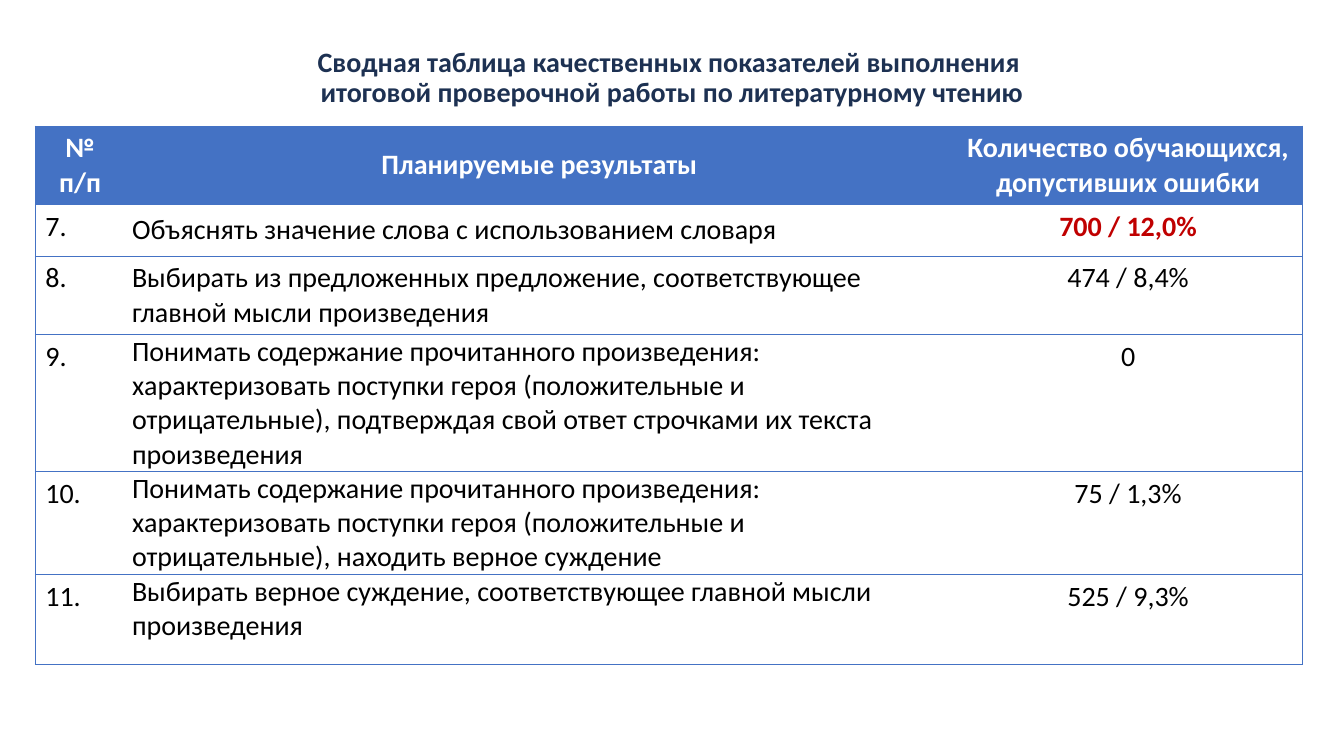
from lxml import etree
from pptx import Presentation
from pptx.dml.color import RGBColor
from pptx.enum.text import MSO_ANCHOR, PP_ALIGN
from pptx.oxml.ns import qn
from pptx.util import Inches, Pt

LEFT, CENTER = PP_ALIGN.LEFT, PP_ALIGN.CENTER
TOP, MIDDLE = MSO_ANCHOR.TOP, MSO_ANCHOR.MIDDLE

NAVY = RGBColor(0x1D, 0x31, 0x52)
BLUE = RGBColor(0x44, 0x72, 0xC4)
WHITE = RGBColor(0xFF, 0xFF, 0xFF)
BLACK = RGBColor(0x00, 0x00, 0x00)
RED = RGBColor(0xC0, 0x00, 0x00)

TITLE = ("Сводная таблица качественных показателей выполнения \v"
         "итоговой проверочной работы по литературному чтению")
HEADINGS = ("№ п/п", "Планируемые результаты",
            "Количество обучающихся, допустивших ошибки")
RESULTS = [
    ("7.", "Объяснять значение слова с использованием словаря", "700 / 12,0%"),
    ("8.", "Выбирать из предложенных предложение, соответствующее главной "
           "мысли произведения", "474 / 8,4%"),
    ("9.", "Понимать содержание прочитанного произведения: характеризовать "
           "поступки героя (положительные и отрицательные), подтверждая свой "
           "ответ строчками их текста произведения", "0"),
    ("10.", "Понимать содержание прочитанного произведения: характеризовать "
            "поступки героя (положительные и отрицательные), находить верное "
            "суждение", "75 / 1,3%"),
    ("11.", "Выбирать верное суждение, соответствующее главной мысли "
            "произведения", "525 / 9,3%"),
]
HIGHLIGHTED = "700 / 12,0%"
COLUMN_WIDTHS = (0.89, 8.22, 3.46)
ROW_HEIGHTS = (0.78, 0.51, 0.78, 1.36, 1.02, 0.89)


def style_paragraph(para, color, bold, align):
    para.alignment = align
    para.font.name = "Calibri"
    para.font.size = Pt(20)
    para.font.bold = bold
    para.font.color.rgb = color


def add_title(page):
    box = page.shapes.add_textbox(Inches(0.77), Inches(0.27),
                                  Inches(11.79), Inches(1.01))
    frame = box.text_frame
    frame.word_wrap = True
    frame.vertical_anchor = MIDDLE
    frame.text = TITLE
    para = frame.paragraphs[0]
    para.line_spacing = 0.9
    style_paragraph(para, NAVY, True, CENTER)


def set_borders(cell, visible_sides):
    properties = cell._tc.get_or_add_tcPr()
    for index, side in enumerate("LRTB"):
        line = etree.Element(qn("a:ln" + side), w=str(Pt(0.5)))
        if side in visible_sides:
            fill = etree.SubElement(line, qn("a:solidFill"))
            etree.SubElement(fill, qn("a:srgbClr"), val=str(BLUE))
        else:
            etree.SubElement(line, qn("a:noFill"))
        properties.insert(index, line)


def fill_cell(cell, text, color, bold, align, anchor):
    cell.text = text
    cell.vertical_anchor = anchor
    style_paragraph(cell.text_frame.paragraphs[0], color, bold, align)


def add_results_table(page):
    rows = [HEADINGS] + RESULTS
    table = page.shapes.add_table(
        len(rows), len(HEADINGS), Inches(0.35), Inches(1.25),
        Inches(sum(COLUMN_WIDTHS)), Inches(sum(ROW_HEIGHTS))).table
    table.horz_banding = False
    for column, width in zip(table.columns, COLUMN_WIDTHS):
        column.width = Inches(width)
    for row, height in zip(table.rows, ROW_HEIGHTS):
        row.height = Inches(height)

    for r, values in enumerate(rows):
        for c, text in enumerate(values):
            cell = table.cell(r, c)
            if r == 0:
                fill_cell(cell, text, WHITE, True, CENTER, MIDDLE)
                cell.fill.solid()
                cell.fill.fore_color.rgb = BLUE
            else:
                marked = text == HIGHLIGHTED
                # The last result sits at the top of its taller row
                anchor = MIDDLE if c == 1 and r < len(RESULTS) else TOP
                fill_cell(cell, text, RED if marked else BLACK, marked,
                          CENTER if c == 2 else LEFT, anchor)
                cell.fill.background()
                if c == 1:
                    cell.margin_left = cell.margin_right = Inches(0.07)
                    cell.margin_top = cell.margin_bottom = 0
            # Outer frame and row rules, no inner verticals
            set_borders(cell, ("LTB", "TB", "RTB")[c])


def main():
    deck = Presentation()
    deck.slide_width = Inches(13.33)
    deck.slide_height = Inches(7.5)
    page = deck.slides.add_slide(deck.slide_layouts[6])
    add_title(page)
    add_results_table(page)
    deck.save("out.pptx")


if __name__ == "__main__":
    main()
